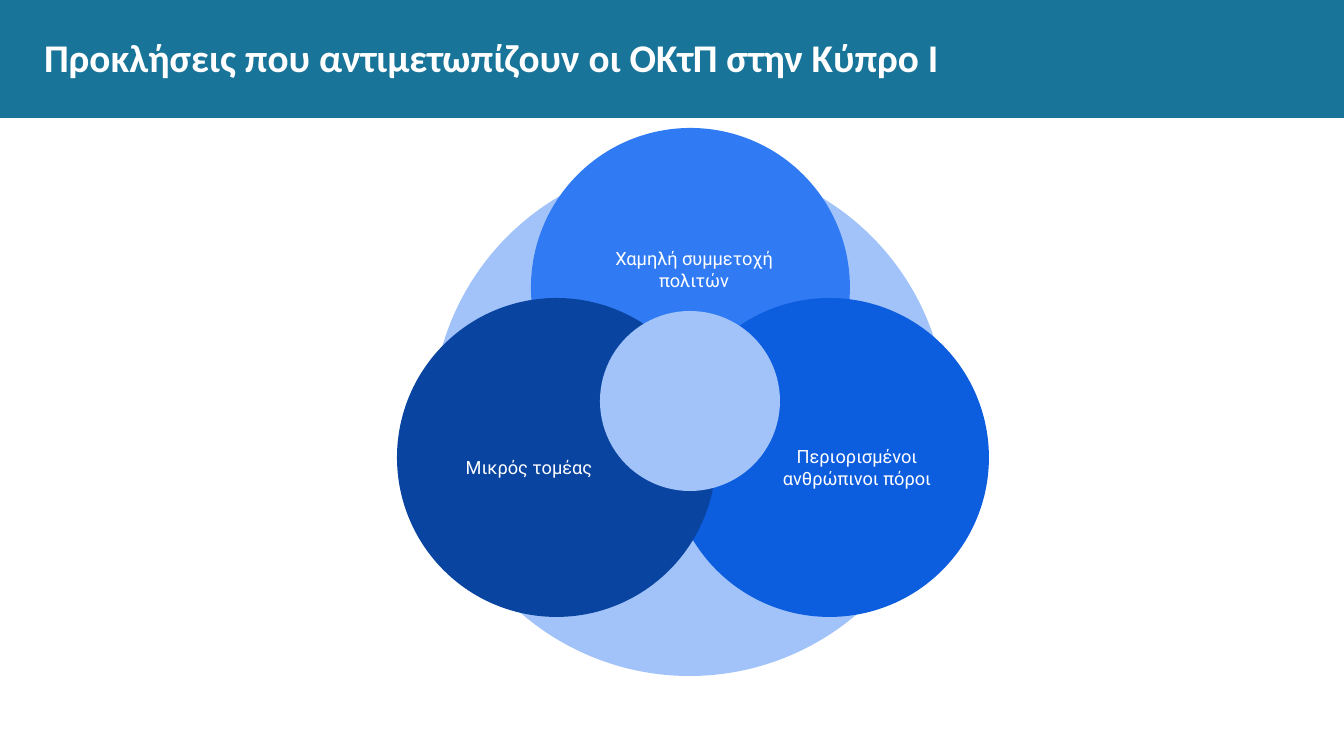
import pptx
import pptx.dml.color
import pptx.enum.shapes
import pptx.enum.text
import pptx.util

PX = 914400 / 100.8
SLIDE_WIDTH, SLIDE_HEIGHT = 1344, 756
CIRCLE_SIZE = 319
LABEL_WIDTH, LABEL_HEIGHT, LABEL_INSET = 220, 103, 13

WHITE = pptx.dml.color.RGBColor(0xFF, 0xFF, 0xFF)
TEAL = pptx.dml.color.RGBColor(0x18, 0x74, 0x98)
PALE_BLUE = pptx.dml.color.RGBColor(0xA1, 0xC3, 0xFA)
BRIGHT_BLUE = pptx.dml.color.RGBColor(0x30, 0x7B, 0xF3)
MEDIUM_BLUE = pptx.dml.color.RGBColor(0x0D, 0x5D, 0xDF)
DARK_BLUE = pptx.dml.color.RGBColor(0x09, 0x44, 0xA1)

# Text, colour, circle left and top, label left and top
CHALLENGES = [
    ("Χαμηλή συμμετοχή πολιτών", BRIGHT_BLUE, (531, 128), (584, 218)),
    ("Περιορισμένοι ανθρώπινοι πόροι", MEDIUM_BLUE, (670, 298), (747, 416)),
    ("Μικρός τομέας", DARK_BLUE, (397, 298), (419, 416)),
]


def px(*lengths):
    """Turn pixel lengths into EMU."""
    return [pptx.util.Emu(round(length * PX)) for length in lengths]


def add_filled(shapes, kind, box, color):
    filled = shapes.add_shape(kind, *px(*box))
    filled.shadow.inherit = False
    filled.fill.solid()
    filled.fill.fore_color.rgb = color
    filled.line.fill.background()


def add_circle(shapes, left, top, size, color):
    oval = pptx.enum.shapes.MSO_SHAPE.OVAL
    add_filled(shapes, oval, (left, top, size, size), color)


def add_text(shapes, text, box, font_name, size, inset=0, bold=False,
             align=pptx.enum.text.PP_ALIGN.LEFT):
    frame = shapes.add_textbox(*px(*box)).text_frame
    frame.word_wrap = True
    frame.vertical_anchor = pptx.enum.text.MSO_ANCHOR.MIDDLE
    margin, = px(inset)
    frame.margin_left = frame.margin_right = margin
    frame.margin_top = frame.margin_bottom = margin
    paragraph = frame.paragraphs[0]
    paragraph.text = text
    paragraph.alignment = align
    paragraph.font.name = font_name
    paragraph.font.size = pptx.util.Pt(size)
    paragraph.font.bold = bold
    paragraph.font.color.rgb = WHITE


def add_challenge(shapes, text, color, circle_corner, label_corner):
    """Group a circle with its label."""
    group = shapes.add_group_shape().shapes
    add_circle(group, *circle_corner, CIRCLE_SIZE, color)
    add_text(group, text, (*label_corner, LABEL_WIDTH, LABEL_HEIGHT),
             "Roboto", 13, LABEL_INSET,
             align=pptx.enum.text.PP_ALIGN.CENTER)


def main():
    presentation = pptx.Presentation()
    presentation.slide_width, presentation.slide_height = px(SLIDE_WIDTH, SLIDE_HEIGHT)
    shapes = presentation.slides.add_slide(presentation.slide_layouts[6]).shapes

    add_filled(shapes, pptx.enum.shapes.MSO_SHAPE.RECTANGLE,
               (0, 0, SLIDE_WIDTH, 118), TEAL)
    add_text(shapes, "Προκλήσεις που αντιμετωπίζουν οι ΟΚτΠ στην Κύπρο Ι",
             (44, 19, 1256, 75), "Calibri", 28, bold=True)

    add_circle(shapes, 432, 161, 515, PALE_BLUE)
    for challenge in CHALLENGES:
        add_challenge(shapes, *challenge)
    add_circle(shapes, 600, 311, 180, PALE_BLUE)

    presentation.save("out.pptx")


if __name__ == "__main__":
    main()
